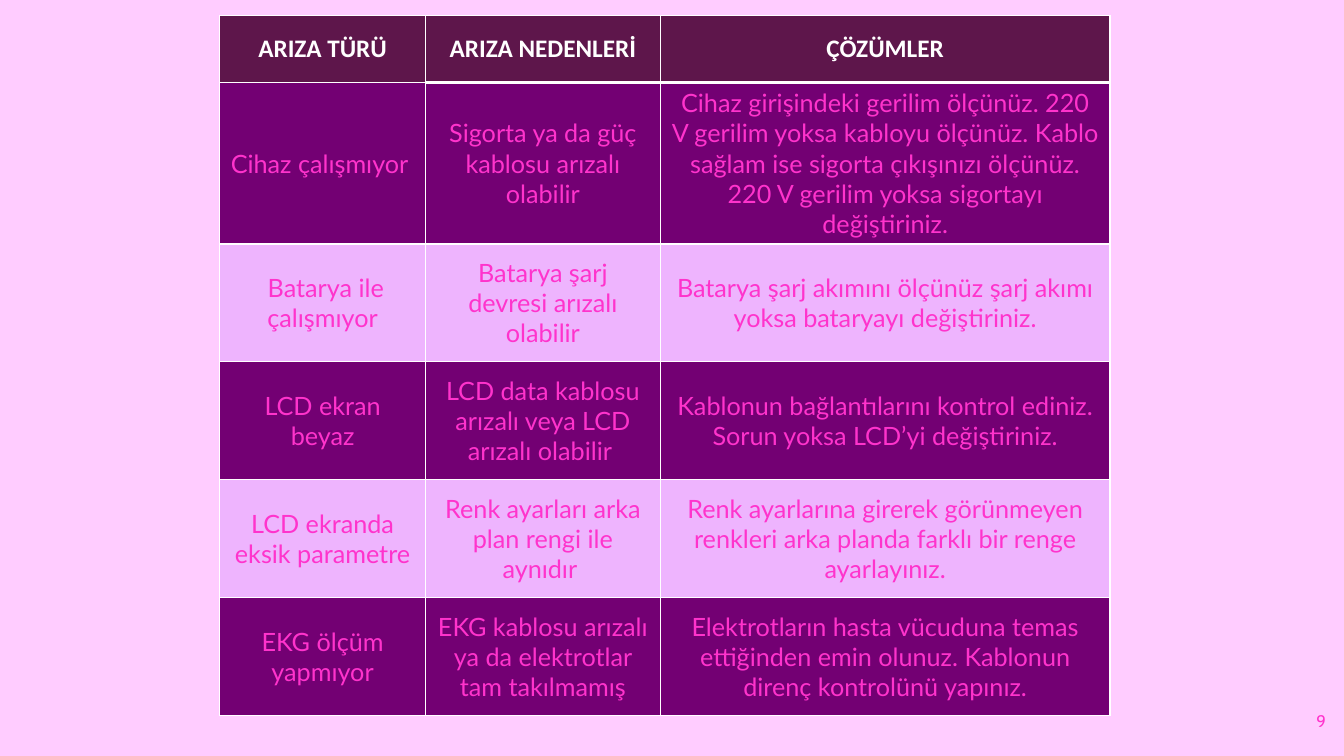
from lxml import etree
from pptx import Presentation
from pptx.dml.color import RGBColor
from pptx.enum.text import MSO_ANCHOR, PP_ALIGN
from pptx.oxml.ns import qn
from pptx.util import Inches, Pt

MIDDLE, TOP = MSO_ANCHOR.MIDDLE, MSO_ANCHOR.TOP
CENTER, RIGHT = PP_ALIGN.CENTER, PP_ALIGN.RIGHT

THEME = {
    "background": "FFCCFF", "header": "5E164B", "bands": ("730073", "EEB4FE"),
    "text": "FF33CC", "white": "FFFFFF",
    "header_font": "Calibri", "body_font": "Lato", "number_font": "Cabin",
    "table_size": 18, "number_size": 12, "thin": 1, "thick": 3,
}

COLUMN_WIDTHS = (2.04, 2.33, 4.46)
HEADER_HEIGHT, ROW_HEIGHT = 0.67, 1.17
ROWS = (
    ("ARIZA TÜRÜ", "ARIZA NEDENLERİ", "ÇÖZÜMLER"),
    ("Cihaz çalışmıyor ", "Sigorta ya da güç kablosu arızalı olabilir",
     "Cihaz girişindeki gerilim ölçünüz. 220 V gerilim yoksa kabloyu ölçünüz. "
     "Kablo sağlam ise sigorta çıkışınızı ölçünüz. 220 V gerilim yoksa sigortayı değiştiriniz."),
    (" Batarya ile çalışmıyor", "Batarya şarj devresi arızalı olabilir",
     "Batarya şarj akımını ölçünüz şarj akımı yoksa bataryayı değiştiriniz."),
    ("LCD ekran beyaz", "LCD data kablosu arızalı veya LCD arızalı olabilir ",
     "Kablonun bağlantılarını kontrol ediniz. Sorun yoksa LCD’yi değiştiriniz."),
    ("LCD ekranda eksik parametre", "Renk ayarları arka plan rengi ile aynıdır ",
     "Renk ayarlarına girerek görünmeyen renkleri arka planda farklı bir renge ayarlayınız."),
    ("EKG ölçüm yapmıyor", "EKG kablosu arızalı ya da elektrotlar tam takılmamış",
     "Elektrotların hasta vücuduna temas ettiğinden emin olunuz. "
     "Kablonun direnç kontrolünü yapınız."),
)


def write_text(frame, text, font, size, color, align=CENTER, bold=False):
    para = frame.paragraphs[0]
    para.alignment = align
    span = para.add_run()
    span.text = text
    span.font.name = font
    span.font.size = Pt(size)
    span.font.bold = bold
    span.font.color.rgb = RGBColor.from_string(color)


def draw_borders(cell, widths, color):
    properties = cell._tc.get_or_add_tcPr()
    for position, (side, width) in enumerate(widths.items()):
        line = etree.Element(qn(f"a:ln{side}"), w=str(Pt(width)))
        fill = etree.SubElement(line, qn("a:solidFill"))
        etree.SubElement(fill, qn("a:srgbClr"), val=color)
        properties.insert(position, line)


deck = Presentation()
deck.slide_width, deck.slide_height = Inches(13.33), Inches(7.5)
page = deck.slides.add_slide(deck.slide_layouts[6])
page.background.fill.solid()
page.background.fill.fore_color.rgb = RGBColor.from_string(THEME["background"])

number_box = page.shapes.add_textbox(Inches(9.42), Inches(6.95), Inches(3.83), Inches(0.4))
number_box.text_frame.word_wrap = True
number_box.text_frame.vertical_anchor = MIDDLE
write_text(number_box.text_frame, "9", THEME["number_font"], THEME["number_size"],
           THEME["text"], align=RIGHT)

table_height = HEADER_HEIGHT + ROW_HEIGHT * (len(ROWS) - 1)
table = page.shapes.add_table(
    len(ROWS), len(COLUMN_WIDTHS), Inches(2.18), Inches(0.15),
    Inches(sum(COLUMN_WIDTHS)), Inches(table_height)).table
for column, width in zip(table.columns, COLUMN_WIDTHS):
    column.width = Inches(width)

for row_index, texts in enumerate(ROWS):
    is_header = row_index == 0
    table.rows[row_index].height = Inches(HEADER_HEIGHT if is_header else ROW_HEIGHT)
    fill_color = THEME["header"] if is_header else THEME["bands"][(row_index - 1) % 2]
    for column_index, text in enumerate(texts):
        cell = table.cell(row_index, column_index)
        cell.vertical_anchor = TOP if (row_index, column_index) == (1, 2) else MIDDLE
        cell.fill.solid()
        cell.fill.fore_color.rgb = RGBColor.from_string(fill_color)
        write_text(cell.text_frame, text,
                   THEME["header_font" if is_header else "body_font"], THEME["table_size"],
                   THEME["white" if is_header else "text"], bold=is_header)
        borders = dict.fromkeys("LRTB", THEME["thin"])
        if column_index > 0 and row_index < 2:
            borders["B" if is_header else "T"] = THEME["thick"]
        draw_borders(cell, borders, THEME["white"])

deck.save("out.pptx")
